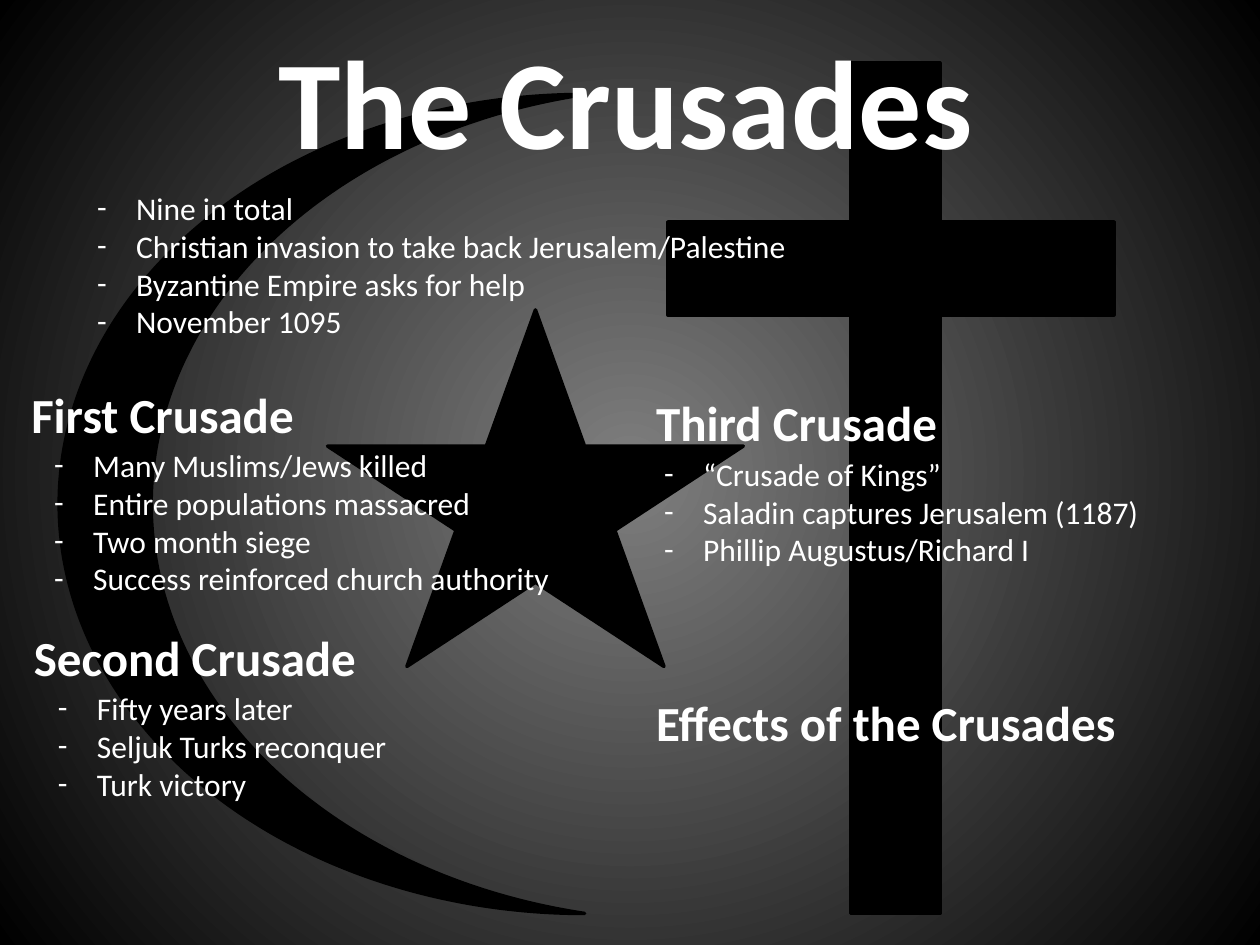
from lxml.etree import SubElement
from pptx import Presentation
from pptx.dml.color import RGBColor
from pptx.enum.shapes import MSO_SHAPE
from pptx.enum.text import MSO_ANCHOR, MSO_AUTO_SIZE, PP_ALIGN
from pptx.oxml.ns import qn
from pptx.util import Inches, Pt

COLORS = {"text": "FFFFFF", "symbol": "000000", "glow": "7F7F7F", "edge": "000000"}
FONT = "Calibri"
TITLE = ("The Crusades", (1.36, 0.14, 7.21, 1.31))
SYMBOLS = [
    (MSO_SHAPE.MOON, (0.47, 0.75, 4.17, 6.5), 0),
    (MSO_SHAPE.RECTANGLE, (6.75, 0.5, 0.71, 6.75), 0),
    (MSO_SHAPE.RECTANGLE, (6.7, 0.36, 0.74, 3.54), 90),
    (MSO_SHAPE.STAR_5_POINT, (2.6, 2.46, 3.3, 2.83), 0),
]
MOON_THICKNESS = 0.175
OVERVIEW = (0.67, 1.45, 6.08, [
    "Nine in total",
    "Christian invasion to take back Jerusalem/Palestine",
    "Byzantine Empire asks for help",
    "November 1095",
])
SECTIONS = [
    ("First Crusade", (0.15, 3, 2.6), (0.18, 8.5), [
        "Many Muslims/Jews killed",
        "Entire populations massacred",
        "Two month siege",
        "Success reinforced church authority",
    ]),
    ("Second Crusade", (0.17, 4.93, 3.58), (0.19, 8.5), [
        "Fifty years later",
        "Seljuk Turks reconquer",
        "Turk victory",
    ]),
    ("Third Crusade", (5.11, 3.07, 3.47), (0.06, 4.58), [
        "“Crusade of Kings”",
        "Saladin captures Jerusalem (1187)",
        "Phillip Augustus/Richard I",
    ]),
    ("Effects of the Crusades", (5.11, 5.45, 4.13), None, []),
]
HEADING_HEIGHT, LIST_DROP = 0.57, 0.49
ROW_HEIGHT, LIST_PADDING = 0.3, 0.1
HANGING_INDENT = 0.31


def color(role):
    return RGBColor.from_string(COLORS[role])


def paint_background(slide):
    fill = slide.background.fill
    fill.gradient()
    for stop, role in zip(fill.gradient_stops, ("glow", "edge")):
        stop.color.rgb = color(role)
    gradient = slide.element.find(".//" + qn("a:gradFill"))
    gradient.remove(gradient.find(qn("a:lin")))
    circle = SubElement(gradient, qn("a:path"), path="circle")
    SubElement(circle, qn("a:fillToRect"), l="50000", t="50000", r="50000", b="50000")


def add_symbol(slide, kind, box, rotation):
    symbol = slide.shapes.add_shape(kind, *map(Inches, box))
    symbol.rotation = rotation
    symbol.shadow.inherit = False
    symbol.fill.solid()
    symbol.fill.fore_color.rgb = color("symbol")
    symbol.line.color.rgb = color("symbol")
    symbol.line.width = Pt(2)
    if kind == MSO_SHAPE.MOON:
        symbol.adjustments[0] = MOON_THICKNESS


def write(holder, box, lines, size, bold=False, align=PP_ALIGN.LEFT, bullet=None):
    holder.left, holder.top, holder.width, holder.height = map(Inches, box)
    frame = holder.text_frame
    frame.word_wrap = True
    frame.auto_size = MSO_AUTO_SIZE.SHAPE_TO_FIT_TEXT
    frame.vertical_anchor = MSO_ANCHOR.TOP
    for row, line in enumerate(lines):
        paragraph = frame.add_paragraph() if row else frame.paragraphs[0]
        paragraph.alignment = align
        paragraph.space_before = Pt(0)
        run = paragraph.add_run()
        run.text = line
        run.font.name, run.font.size, run.font.bold = FONT, Pt(size), bold
        run.font.color.rgb = color("text")
        if bullet:
            properties = paragraph._p.get_or_add_pPr()
            properties.set("marL", str(Inches(HANGING_INDENT)))
            properties.set("indent", str(-Inches(HANGING_INDENT)))
            SubElement(properties, qn("a:buFont"), typeface=FONT)
            SubElement(properties, qn("a:buChar"), char=bullet)


def write_list(holder, left, top, width, items):
    height = ROW_HEIGHT * len(items) + LIST_PADDING
    write(holder, (left, top, width, height), items, 18, bullet="-")


def main():
    deck = Presentation()
    deck.slide_width, deck.slide_height = Inches(10), Inches(7.5)
    slide = deck.slides.add_slide(deck.slide_layouts.get_by_name("Comparison"))
    title, *bodies = list(slide.placeholders)[:5]
    paint_background(slide)
    for symbol in SYMBOLS:
        add_symbol(slide, *symbol)

    def bring_forward(holder):
        slide.shapes._spTree.append(holder.element)
        return holder

    heading, title_box = TITLE
    write(bring_forward(title), title_box, [heading], 72, True, PP_ALIGN.CENTER)
    free_bodies = iter(bodies)
    write_list(bring_forward(next(free_bodies)), *OVERVIEW)
    for heading, (left, top, width), list_layout, items in SECTIONS:
        box = (left, top, width, HEADING_HEIGHT)
        write(slide.shapes.add_textbox(*map(Inches, box)), box, [heading], 28, True)
        if items:
            inset, list_width = list_layout
            write_list(bring_forward(next(free_bodies)),
                       left + inset, top + LIST_DROP, list_width, items)
    deck.save("out.pptx")


if __name__ == "__main__":
    main()
